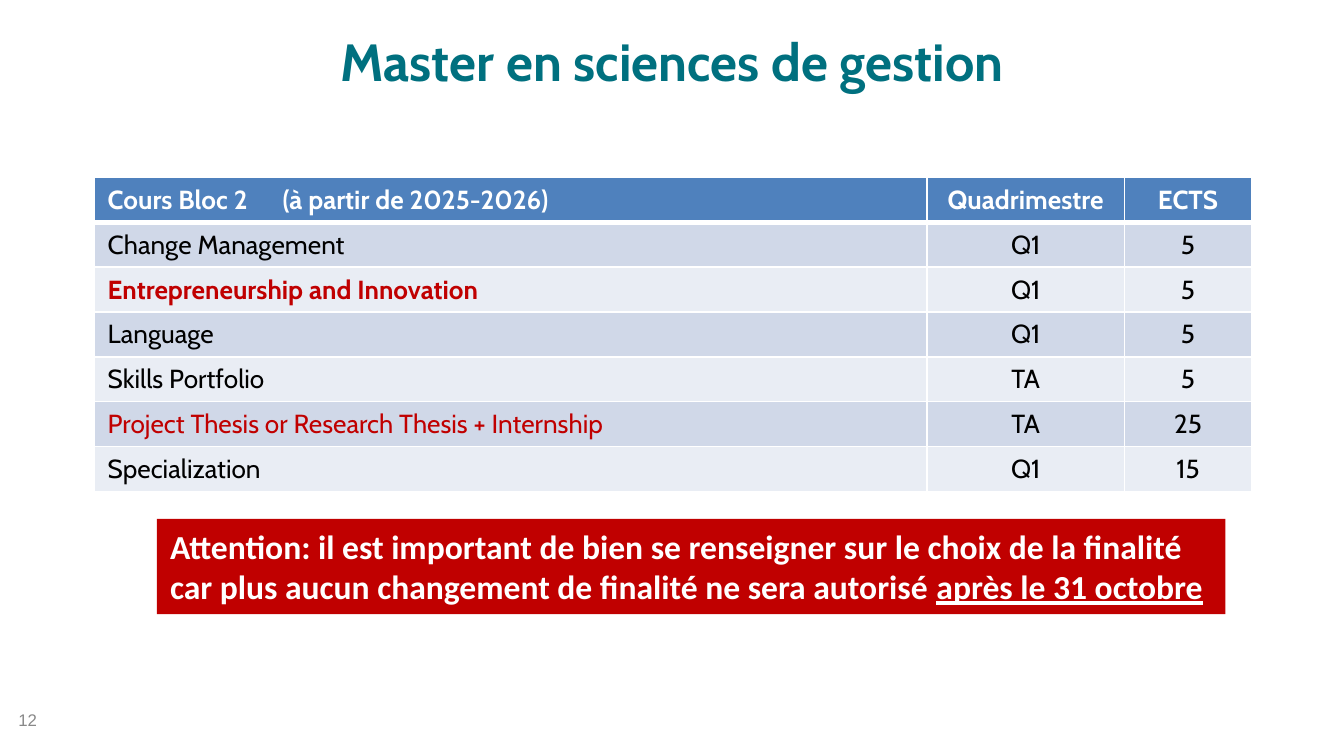
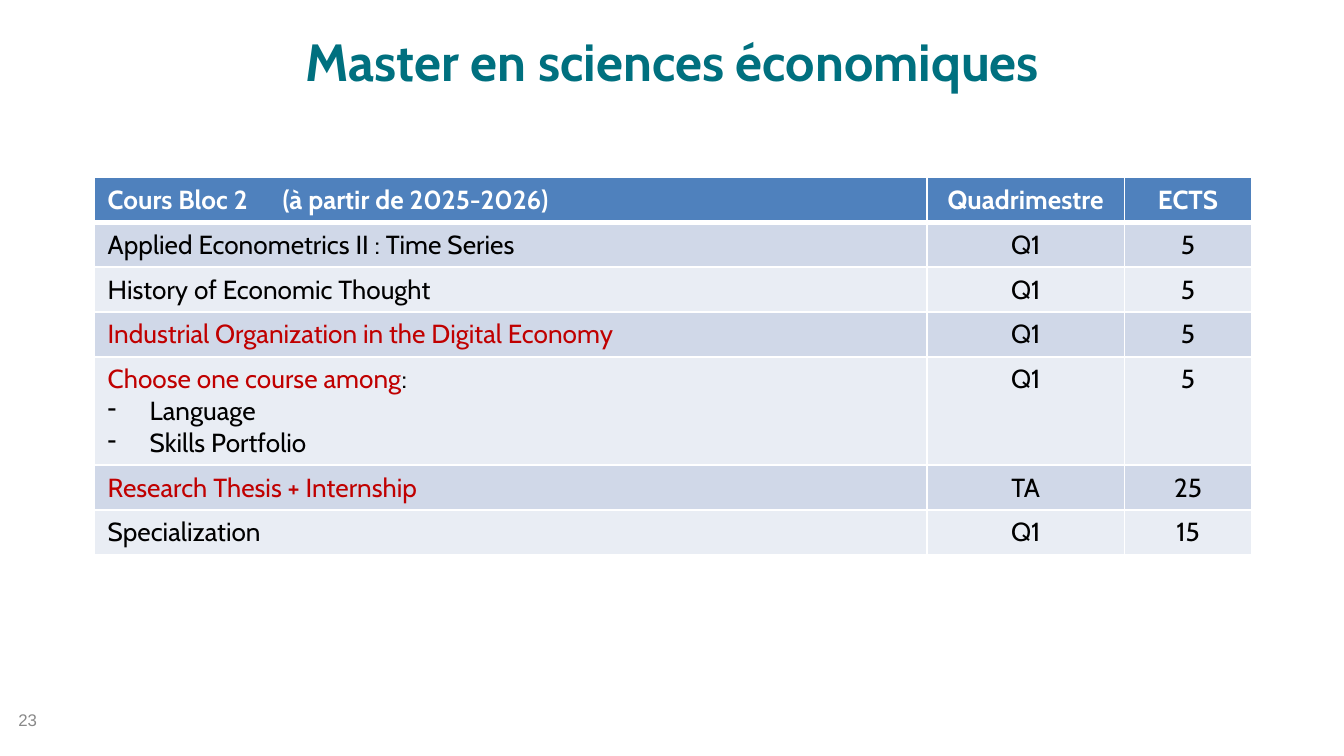
from dataclasses import dataclass

from lxml.etree import SubElement
from pptx import Presentation
from pptx.dml.color import RGBColor
from pptx.enum.shapes import MSO_SHAPE as Preset
from pptx.enum.text import MSO_ANCHOR as Anchor, MSO_AUTO_SIZE as AutoSize, PP_ALIGN as Align
from pptx.oxml.ns import qn
from pptx.util import Pt

TEAL, BLUE, RED = "00707F", "4F81BD", "C00000"
WHITE, BLACK, GREY = "FFFFFF", "000000", "898989"
BANDS = ("D0D8E8", "E9EDF4")
COLUMNS = (446, 106, 68)
LINE_HEIGHT, ROW_HEIGHT = 17, 24
TABLE_LEFT, TABLE_TOP = 50.5, 95
PERIOD_TAB = 93.75
BULLET_INDENT = 22.5


@dataclass(frozen=True)
class Span:
    text: str
    color: str = BLACK
    bold: bool = False
    underline: bool = False
    font: str = "Cabin"
    size: float = 14


@dataclass(frozen=True)
class Line:
    spans: tuple[Span, ...]
    align: Align = Align.LEFT
    bullet: str = ""
    tab: float = 0


@dataclass(frozen=True)
class Course:
    lines: tuple[Line, ...]
    term: str
    credits: int


@dataclass(frozen=True)
class Programme:
    title: str
    number: int
    courses: tuple[Course, ...]
    warning: tuple[Line, ...] = ()


def course(name: str, term: str, credits: int, color: str = BLACK, bold: bool = False) -> Course:
    return Course((Line((Span(name, color, bold),)),), term, credits)


def warning_line(text: str, underlined: str = "") -> Line:
    parts = ((text, False), (underlined, True))
    return Line(tuple(Span(part, WHITE, True, underline, "Calibri", 18)
                      for part, underline in parts if part))


PROGRAMMES = (
    Programme(
        "Master en sciences de gestion", 12,
        (
            course("Change Management", "Q1", 5),
            course("Entrepreneurship and Innovation", "Q1", 5, RED, True),
            course("Language", "Q1", 5),
            course("Skills Portfolio", "TA", 5),
            course("Project Thesis or Research Thesis + Internship", "TA", 25, RED),
            course("Specialization", "Q1", 15),
        ),
        (
            warning_line("Attention: il est important de bien se renseigner sur le choix de la finalité"),
            warning_line("car plus aucun changement de finalité ne sera autorisé ", "après le 31 octobre"),
        ),
    ),
    Programme(
        "Master en sciences économiques", 23,
        (
            course("Applied Econometrics II : Time Series", "Q1", 5),
            course("History of Economic Thought", "Q1", 5),
            course("Industrial Organization in the Digital Economy", "Q1", 5, RED),
            Course(
                (
                    Line((Span("Choose one course among", RED), Span(":"))),
                    Line((Span("Language"),), bullet="-"),
                    Line((Span("Skills Portfolio"),), bullet="-"),
                ),
                "Q1", 5,
            ),
            course("Research Thesis + Internship", "TA", 25, RED),
            course("Specialization", "Q1", 15),
        ),
    ),
)


def rgb(color: str) -> RGBColor:
    return RGBColor.from_string(color)


def write(frame, lines: tuple[Line, ...]) -> None:
    for index, line in enumerate(lines):
        paragraph = frame.add_paragraph() if index else frame.paragraphs[0]
        paragraph.alignment = line.align
        properties = paragraph._p.get_or_add_pPr()
        if line.bullet:
            properties.set("marL", str(Pt(BULLET_INDENT)))
            properties.set("indent", str(-Pt(BULLET_INDENT)))
            SubElement(properties, qn("a:buChar"), char=line.bullet)
        if line.tab:
            stops = SubElement(properties, qn("a:tabLst"))
            SubElement(stops, qn("a:tab"), pos=str(Pt(line.tab)), algn="l")
        for span in line.spans:
            run = paragraph.add_run()
            run.text = span.text
            font = run.font
            font.name, font.size = span.font, Pt(span.size)
            font.bold, font.underline = span.bold, span.underline
            font.color.rgb = rgb(span.color)


def add_title(slide, title: str) -> None:
    heading = slide.shapes.title
    heading.left, heading.top, heading.width, heading.height = Pt(36), Pt(10), Pt(648), Pt(45)
    frame = heading.text_frame
    frame.auto_size = AutoSize.NONE
    frame.vertical_anchor = Anchor.MIDDLE
    write(frame, (Line((Span(title, TEAL, True, size=28),), Align.CENTER),))


def add_page_number(slide, number: int) -> None:
    frame = slide.shapes.add_textbox(Pt(2.75), Pt(375), Pt(168), Pt(21.5)).text_frame
    frame.word_wrap = True
    frame.vertical_anchor = Anchor.MIDDLE
    write(frame, (Line((Span(str(number), GREY, font="Arial", size=9),)),))


def style_cell(cell, fill: str, top: float, bottom: float) -> None:
    properties = cell._tc.get_or_add_tcPr()
    for side, width in (("L", 1), ("R", 1), ("T", top), ("B", bottom)):
        border = SubElement(properties, qn(f"a:ln{side}"), w=str(Pt(width)))
        SubElement(SubElement(border, qn("a:solidFill")), qn("a:srgbClr"), val=WHITE)
    cell.fill.solid()
    cell.fill.fore_color.rgb = rgb(fill)


def centred(text: str, color: str = BLACK, bold: bool = False) -> tuple[Line, ...]:
    return (Line((Span(text, color, bold),), Align.CENTER),)


def add_courses(slide, courses: tuple[Course, ...]) -> None:
    header = (
        (Line((Span("Cours Bloc 2\t(à partir de 2025-2026)", WHITE, True),), tab=PERIOD_TAB),),
        centred("Quadrimestre", WHITE, True),
        centred("ECTS", WHITE, True),
    )
    rows = [header] + [(c.lines, centred(c.term), centred(str(c.credits))) for c in courses]
    heights = [ROW_HEIGHT + LINE_HEIGHT * (len(row[0]) - 1) for row in rows]
    table = slide.shapes.add_table(len(rows), len(COLUMNS), Pt(TABLE_LEFT), Pt(TABLE_TOP),
                                   Pt(sum(COLUMNS)), Pt(sum(heights))).table
    for column, width in zip(table.columns, COLUMNS):
        column.width = Pt(width)
    for index, (row, height) in enumerate(zip(rows, heights)):
        table.rows[index].height = Pt(height)
        fill = BANDS[(index - 1) % 2] if index else BLUE
        top, bottom = 3 if index == 1 else 1, 1 if index else 3
        for cell, lines in zip(table.rows[index].cells, row):
            style_cell(cell, fill, top, bottom)
            write(cell.text_frame, lines)


def add_warning(slide, lines: tuple[Line, ...]) -> None:
    banner = slide.shapes.add_shape(Preset.RECTANGLE, Pt(84), Pt(278), Pt(572.5), Pt(51))
    banner.shadow.inherit = False
    banner.fill.solid()
    banner.fill.fore_color.rgb = rgb(RED)
    banner.line.fill.background()
    frame = banner.text_frame
    frame.word_wrap = False
    frame.auto_size = AutoSize.SHAPE_TO_FIT_TEXT
    frame.vertical_anchor = Anchor.TOP
    write(frame, lines)


def main() -> None:
    deck = Presentation()
    deck.slide_width, deck.slide_height = Pt(720), Pt(405)
    title_only = deck.slide_layouts[5]
    for programme in PROGRAMMES:
        slide = deck.slides.add_slide(title_only)
        add_page_number(slide, programme.number)
        add_courses(slide, programme.courses)
        add_title(slide, programme.title)
        if programme.warning:
            add_warning(slide, programme.warning)
    deck.save("out.pptx")


if __name__ == "__main__":
    main()
